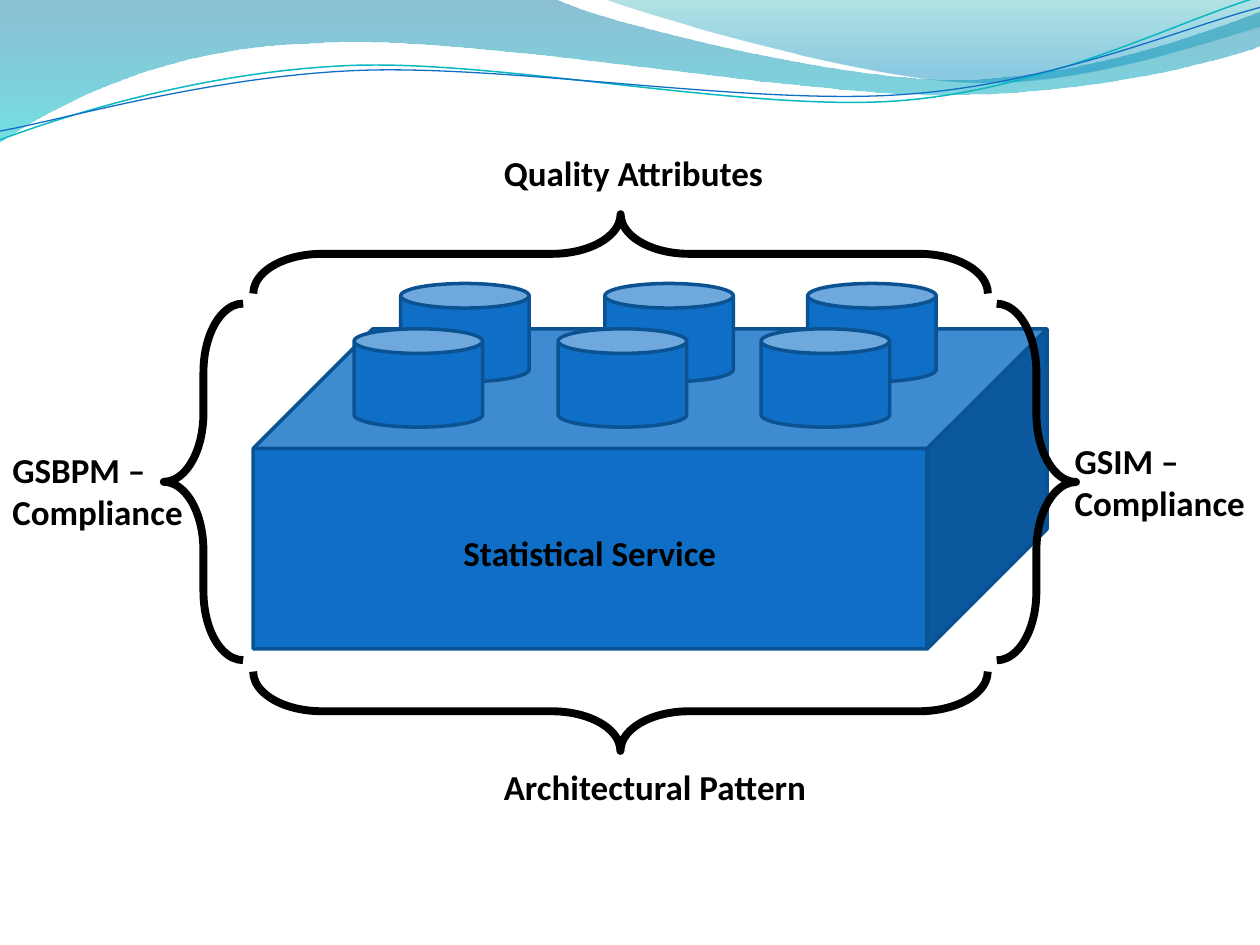
"""Build a slide showing a statistical service as a brick framed by four braces."""
from math import cos, radians, sin
from lxml.etree import SubElement
from pptx import Presentation
from pptx.dml.color import RGBColor
from pptx.enum.shapes import MSO_SHAPE as Kind
from pptx.enum.text import MSO_ANCHOR as Anchor, PP_ALIGN as Align
from pptx.oxml.ns import qn
from pptx.util import Inches, Pt

BLUE, EDGE, BLACK = "0F6FC6", "0B5292", "000000"

BANDS = [
    dict(start=(0, 0), gradient=[(0, "0074A1", 45), (1, "00C6CF", 55)], path=[
        (4.4, -0.01),
        (4.76, 0.17, 6.64, 0.63, 7.58, 0.63),
        (8.53, 0.63, 9.58, 0.26, 10, 0.09),
        (10.01, 0.36),
        (9.83, 0.44, 8.7, 0.76, 7.46, 0.75),
        (6.22, 0.75, 3.82, 0.28, 2.57, 0.34),
        (1.29, 0.36, 0.46, 0.83, -0.01, 1.13),
        (0, 0)]),
    dict(start=(4.79, -0.01), gradient=[(0, "00A1A9", 30), (0.8, "008BBF", 45)], path=[
        (5.09, 0.11, 6.82, 0.62, 7.69, 0.65),
        (8.56, 0.69, 9.61, 0.32, 10, 0.21),
        (10, 0),
        (4.79, -0.01)]),
]
WAVE_TILT = -2.7
WAVES = [
    dict(start=(0, 1.11), center=(4.99, 0.57), color="0AB8BF", width=0.85, path=[
        (0.48, 0.93, 1.58, 0.57, 2.77, 0.52),
        (3.95, 0.47, 5.93, 0.89, 7.13, 0.8),
        (8.33, 0.71, 9.38, 0.15, 9.98, -0.02)]),
    dict(start=(0, 1.04), center=(5, 0.59), color=BLUE, width=0.75, path=[
        (0.47, 0.96, 1.64, 0.61, 2.83, 0.56),
        (4.03, 0.51, 5.97, 0.84, 7.17, 0.75),
        (8.36, 0.67, 9.41, 0.21, 10, 0.06)]),
]
BRICK = (2.01, 2.61, 6.3, 2.54)
STUD_COLUMNS = [4.43, 2.81, 6.04]
STUD_TOP, STUD_SIZE = 2.61, (1.02, 0.78)
BACK_SHIFT = (0.37, -0.36)
BRACES = [
    (1.3, 2.41, 2.83, 0),
    (4.61, 2.73, 5.83, 270),
    (4.61, -0.9, 5.83, 90),
    (7.91, 2.41, 2.83, 180),
]
BRACE_WIDTH = 0.63
LABELS = [
    (["GSBPM –", "Compliance"], (0, 3.51, 1.57, 0.77)),
    (["GSIM –", "Compliance"], (8.43, 3.44, 1.57, 0.77)),
    (["Architectural Pattern"], (3.9, 6.03, 2.63, 0.44)),
    (["Quality Attributes"], (3.9, 1.15, 2.28, 0.44)),
    (["Statistical Service"], (3.58, 4.17, 2.23, 0.44)),
]


def rgb(color):
    return RGBColor.from_string(color)


def turn(point, center, angle):
    dx, dy = point[0] - center[0], point[1] - center[1]
    c, s = cos(radians(angle)), sin(radians(angle))
    return center[0] + dx * c - dy * s, center[1] + dx * s + dy * c


def add_outline(page, start, path, close, center=(0, 0), tilt=0):
    points = [start] + [part[i:i + 2] for part in path for i in range(0, len(part), 2)]
    points = [tuple(map(Inches, turn(point, center, -tilt))) for point in points]
    builder = page.shapes.build_freeform(*points[0])
    builder.add_line_segments(points[1:], close=close)
    shape = builder.convert_to_shape()
    shape.shadow.inherit = False
    shape.rotation = tilt
    steps = iter(list(shape._element.iter(qn("a:lnTo"))))
    for part in path:
        first = next(steps)
        if len(part) == 6:
            first.tag = qn("a:cubicBezTo")
            for _ in range(2):
                step = next(steps)
                first.append(step[0])
                step.getparent().remove(step)
    return shape


def add_band(page, start, path, gradient):
    shape = add_outline(page, start, path, True)
    shape.line.fill.background()
    shape.fill.gradient()
    shape.fill.gradient_angle = 270
    for stop, (position, color, _) in zip(shape.fill.gradient_stops, gradient):
        stop.position = position
        stop.color.rgb = rgb(color)
    for node, (_, _, opacity) in zip(shape._element.iter(qn("a:srgbClr")), gradient):
        SubElement(node, qn("a:alpha")).set("val", str(opacity * 1000))


def add_wave(page, start, center, path, color, width):
    shape = add_outline(page, start, path, False, center, WAVE_TILT)
    shape.fill.background()
    shape.line.color.rgb = rgb(color)
    shape.line.width = Pt(width)


def add_solid(page, kind, place, line, width, fill=None, adjust=(), rotation=0):
    shape = page.shapes.add_shape(kind, *map(Inches, place))
    shape.shadow.inherit = False
    shape.rotation = rotation
    for index, value in enumerate(adjust):
        shape.adjustments[index] = value
    if fill:
        shape.fill.solid()
        shape.fill.fore_color.rgb = rgb(fill)
    else:
        shape.fill.background()
    shape.line.color.rgb = rgb(line)
    shape.line.width = Pt(width)


def add_label(page, lines, place, size=20, color=BLACK, font="Calibri", bold=True):
    box = page.shapes.add_textbox(*map(Inches, place))
    frame = box.text_frame
    frame.word_wrap = False
    frame.vertical_anchor = Anchor.TOP
    for index, line in enumerate(lines):
        para = frame.add_paragraph() if index else frame.paragraphs[0]
        para.alignment = Align.LEFT
        span = para.add_run()
        span.text = line
        span.font.name = font
        span.font.size = Pt(size)
        span.font.bold = bold
        span.font.color.rgb = rgb(color)


def main():
    deck = Presentation()
    deck.slide_width, deck.slide_height = Inches(10), Inches(7.5)
    page = deck.slides.add_slide(deck.slide_layouts[6])
    for band in BANDS:
        add_band(page, **band)
    for wave in WAVES:
        add_wave(page, **wave)
    add_solid(page, Kind.CUBE, BRICK, EDGE, 2, fill=BLUE, adjust=[0.374])
    for left in STUD_COLUMNS:
        for dx, dy in (BACK_SHIFT, (0, 0)):
            add_solid(page, Kind.CAN, (left + dx, STUD_TOP + dy, *STUD_SIZE), EDGE, 2, fill=BLUE)
    for left, top, length, rotation in BRACES:
        add_solid(page, Kind.LEFT_BRACE, (left, top, BRACE_WIDTH, length), BLACK, 4.5,
                  adjust=[0.866, 0.5], rotation=rotation)
    for lines, place in LABELS:
        add_label(page, lines, place)
    deck.save("out.pptx")


if __name__ == "__main__":
    main()
